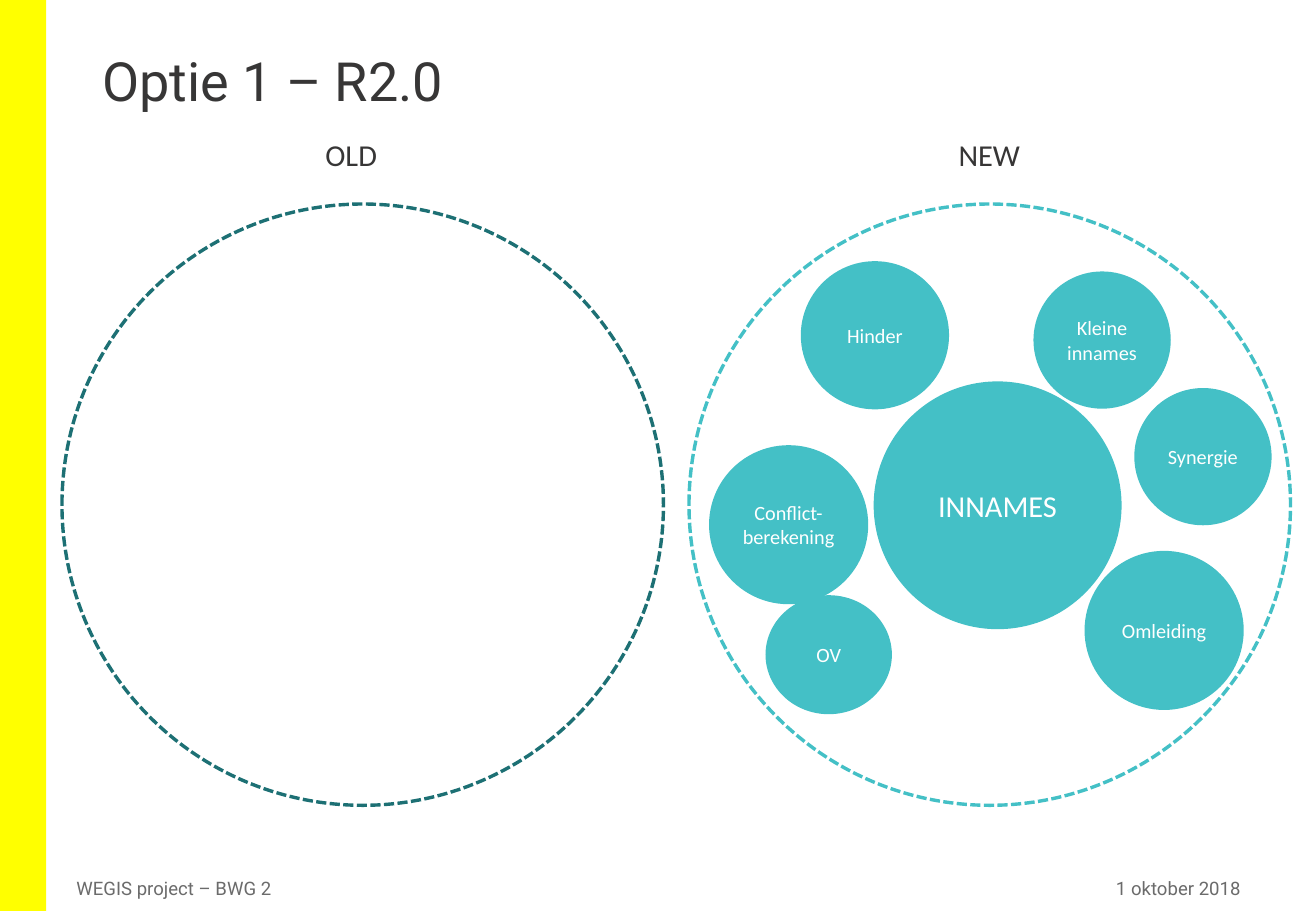
import pptx
import pptx.util
import pptx.dml.color
import pptx.enum.dml
import pptx.enum.shapes
import pptx.enum.text

Inches, Pt = pptx.util.Inches, pptx.util.Pt
RGBColor = pptx.dml.color.RGBColor
ALIGN = pptx.enum.text.PP_ALIGN
ANCHOR = pptx.enum.text.MSO_ANCHOR
SHAPE = pptx.enum.shapes.MSO_SHAPE

YELLOW = RGBColor(0xFF, 0xFF, 0x00)
TEAL = RGBColor(0x44, 0xC0, 0xC6)
DARK_TEAL = RGBColor(0x1D, 0x70, 0x74)
WHITE = RGBColor(0xFF, 0xFF, 0xFF)
INK = RGBColor(0x37, 0x36, 0x36)
GREY = RGBColor(0x6B, 0x6B, 0x6B)

# Content
TITLE = "Optie 1 – R2.0"
# Footer: text, left, width, alignment
FOOTER = [
    ("WEGIS project – BWG 2", 0.53, 6.65, ALIGN.LEFT),
    ("1 oktober 2018", 7.18, 3.13, ALIGN.RIGHT),
]
# Releases: heading, heading left, heading width, ring colour
RELEASES = [("OLD", 2.58, 0.63, DARK_TEAL), ("NEW", 7.79, 0.71, TEAL)]
# Modules: name, centre x, centre y, width, height, text size, inset
MODULES = [
    ("INNAMES", 8.21, 4.16, 2.04, 2.04, 18, 0.1),
    ("Kleine innames", 9.07, 2.8, 1.13, 1.13, 12, 0),
    ("Hinder", 7.2, 2.76, 1.22, 1.22, 12, 0),
    ("Omleiding", 9.58, 5.19, 1.31, 1.31, 12, 0),
    ("Conflict-berekening", 6.49, 4.32, 1.31, 1.31, 12, 0),
    ("OV", 6.82, 5.39, 1.04, 0.98, 12, 0),
    ("Synergie", 9.9, 3.76, 1.13, 1.13, 12, 0),
]

# Layout
WIDTH, HEIGHT = 10.83, 7.5
BAR_WIDTH = 0.38
RING_LEFT, RING_TOP, RING_SIZE, RING_STEP = 0.51, 1.68, 4.95, 5.16

prs = pptx.Presentation()
prs.slide_width, prs.slide_height = Inches(WIDTH), Inches(HEIGHT)
s = prs.slides.add_slide(prs.slide_layouts[5])


def write(sp, text, size, font, color, align, anchor, wrap=True):
    tf = sp.text_frame
    tf.word_wrap = wrap
    tf.vertical_anchor = anchor
    p = tf.paragraphs[0]
    p.text = text
    p.alignment = align
    p.font.size, p.font.name = Pt(size), font
    p.font.color.rgb = color
    return p


def add_shape(kind, x, y, w, h, fill=None, line=None):
    sp = s.shapes.add_shape(kind, Inches(x), Inches(y), Inches(w), Inches(h))
    sp.shadow.inherit = False
    if fill is None:
        sp.fill.background()
    else:
        sp.fill.solid()
        sp.fill.fore_color.rgb = fill
    if line is None:
        sp.line.fill.background()
    else:
        sp.line.color.rgb = line
        sp.line.width = Pt(2)
        sp.line.dash_style = pptx.enum.dml.MSO_LINE.SQUARE_DOT
    return sp


def add_text(x, y, w, h, *style, **options):
    sp = s.shapes.add_textbox(Inches(x), Inches(y), Inches(w), Inches(h))
    write(sp, *style, **options)


# Side bar and title
add_shape(SHAPE.RECTANGLE, 0, 0, BAR_WIDTH, HEIGHT, fill=YELLOW)
title = s.shapes.title
title.left, title.top = Inches(0.74), Inches(0.4)
title.width, title.height = Inches(9.34), Inches(1.08)
p = write(title, TITLE, 32, "Roboto", INK, ALIGN.LEFT, ANCHOR.TOP)
p.line_spacing = 0.9

# Footer
for text, x, w, align in FOOTER:
    add_text(x, 7.22, w, 0.19, text, 11, "Roboto", GREY, align, ANCHOR.MIDDLE)

# One dashed ring with a heading per release
for i, (name, x, w, color) in enumerate(RELEASES):
    add_shape(SHAPE.OVAL, RING_LEFT + i * RING_STEP, RING_TOP,
              RING_SIZE, RING_SIZE, line=color)
    add_text(x, 1.07, w, 0.4, name, 18, "Calibri", INK,
             ALIGN.LEFT, ANCHOR.TOP, wrap=False)

# Modules inside the new release
for name, cx, cy, w, h, size, inset in MODULES:
    sp = add_shape(SHAPE.OVAL, cx - w / 2, cy - h / 2, w, h, fill=TEAL)
    write(sp, name, size, "Calibri", WHITE, ALIGN.CENTER, ANCHOR.MIDDLE)
    tf = sp.text_frame
    tf.margin_left = tf.margin_right = Inches(inset)
    tf.margin_top = tf.margin_bottom = Inches(inset / 2)

prs.save("out.pptx")
